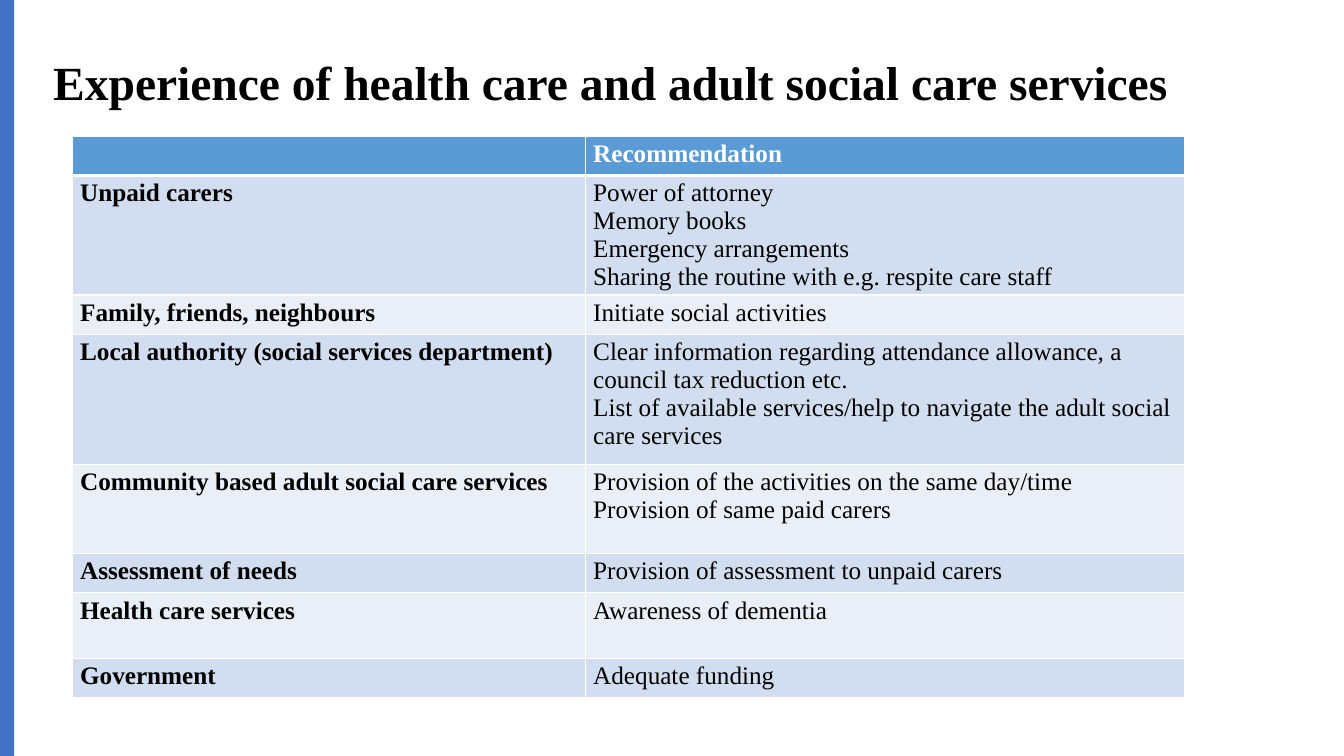
from dataclasses import dataclass

from lxml import etree
from pptx import Presentation
from pptx.dml.color import RGBColor
from pptx.enum.shapes import MSO_SHAPE
from pptx.enum.text import MSO_ANCHOR, MSO_AUTO_SIZE, PP_ALIGN
from pptx.oxml.ns import qn
from pptx.util import Cm, Pt

RECT = MSO_SHAPE.RECTANGLE
TOP = MSO_ANCHOR.TOP
MIDDLE = MSO_ANCHOR.MIDDLE
NO_FIT = MSO_AUTO_SIZE.NONE
LEFT = PP_ALIGN.LEFT
TITLE_ONLY = 5


@dataclass(frozen=True)
class Theme:
    font: str = "Times New Roman"
    title: int = 34
    body: int = 18
    ink: str = "000000"
    white: str = "FFFFFF"
    bar: str = "4472C4"
    head: str = "5B9BD5"
    bands: tuple[str, str] = ("D2DEEF", "EAEFF7")
    line: int = 1
    rule: int = 3


@dataclass(frozen=True)
class Row:
    height: float
    group: str
    advice: tuple[str, ...]


THEME = Theme()
COLS = (12.93, 15.09)
ROWS = (
    Row(0.99, "", ("Recommendation",)),
    Row(2.97, "Unpaid carers", (
        "Power of attorney",
        "Memory books",
        "Emergency arrangements",
        "Sharing the routine with e.g. respite care staff",
    )),
    Row(0.99, "Family, friends, neighbours", ("Initiate social activities",)),
    Row(3.28, "Local authority (social services department)", (
        "Clear information regarding attendance allowance, a council tax reduction etc.",
        "List of available services/help to navigate the adult social care services",
    )),
    Row(2.24, "Community based adult social care services", (
        "Provision of the activities on the same day/time",
        "Provision of same paid carers",
    )),
    Row(0.99, "Assessment of needs", ("Provision of assessment to unpaid carers",)),
    Row(1.65, "Health care services", ("Awareness of dementia",)),
    Row(0.99, "Government", ("Adequate funding",)),
)


def write(frame, lines, *, size=THEME.body, color=THEME.ink, bold=False, space=1.0) -> None:
    """Fill a text frame with one paragraph per line."""
    frame.word_wrap = True
    for i, line in enumerate(lines):
        para = frame.paragraphs[0] if i == 0 else frame.add_paragraph()
        para.alignment = LEFT
        para.line_spacing = space
        run = para.add_run()
        run.text = line
        run.font.name = THEME.font
        run.font.size = Pt(size)
        run.font.bold = bold
        run.font.color.rgb = RGBColor.from_string(color)


def edge(cell, widths: dict[str, int]) -> None:
    """Give a cell white borders, ahead of its fill."""
    props = cell._tc.get_or_add_tcPr()
    for i, (side, width) in enumerate(widths.items()):
        line = etree.Element(qn(f"a:ln{side}"), w=str(Pt(width)))
        fill = etree.SubElement(line, qn("a:solidFill"))
        etree.SubElement(fill, qn("a:srgbClr"), val=THEME.white)
        props.insert(i, line)


def draw_title(slide) -> None:
    title = slide.shapes.title
    title.left, title.top = Cm(1.09), Cm(0.89)
    title.width, title.height = Cm(31.7), Cm(3.68)
    frame = title.text_frame
    frame.auto_size = NO_FIT
    frame.vertical_anchor = MIDDLE
    frame.margin_left = frame.margin_right = Cm(0.25)
    frame.margin_top, frame.margin_bottom = Cm(0.13), Cm(1.32)
    write(frame, ["Experience of health care and adult social care services"],
          size=THEME.title, bold=True, space=0.9)


def draw_bar(slide, height: int) -> None:
    bar = slide.shapes.add_shape(RECT, 0, 0, Cm(0.36), height)
    bar.shadow.inherit = False
    bar.fill.solid()
    bar.fill.fore_color.rgb = RGBColor.from_string(THEME.bar)
    bar.line.fill.background()


def draw_cell(cell, lines, row: int, col: int) -> None:
    head = row == 0
    cell.margin_left = cell.margin_right = Cm(0.19)
    cell.margin_top = cell.margin_bottom = Cm(0.1)
    cell.vertical_anchor = TOP
    cell.fill.solid()
    shade = THEME.head if head else THEME.bands[(row - 1) % 2]
    cell.fill.fore_color.rgb = RGBColor.from_string(shade)
    edge(cell, {
        "L": THEME.line,
        "R": THEME.line,
        "T": THEME.rule if row == 1 else THEME.line,
        "B": THEME.rule if head else THEME.line,
    })
    if any(lines):
        write(cell.text_frame, lines, bold=head or col == 0,
              color=THEME.white if head else THEME.ink)


def draw_table(slide) -> None:
    size = Cm(sum(COLS)), Cm(sum(row.height for row in ROWS))
    table = slide.shapes.add_table(
        len(ROWS), len(COLS), Cm(1.83), Cm(3.43), *size).table
    for col, width in zip(table.columns, COLS):
        col.width = Cm(width)
    for i, row in enumerate(ROWS):
        table.rows[i].height = Cm(row.height)
        for j, lines in enumerate(((row.group,), row.advice)):
            draw_cell(table.cell(i, j), lines, i, j)


def main() -> None:
    deck = Presentation()
    deck.slide_width, deck.slide_height = Cm(33.87), Cm(19.05)
    slide = deck.slides.add_slide(deck.slide_layouts[TITLE_ONLY])
    draw_title(slide)
    draw_bar(slide, deck.slide_height)
    draw_table(slide)
    deck.save("out.pptx")


if __name__ == "__main__":
    main()
